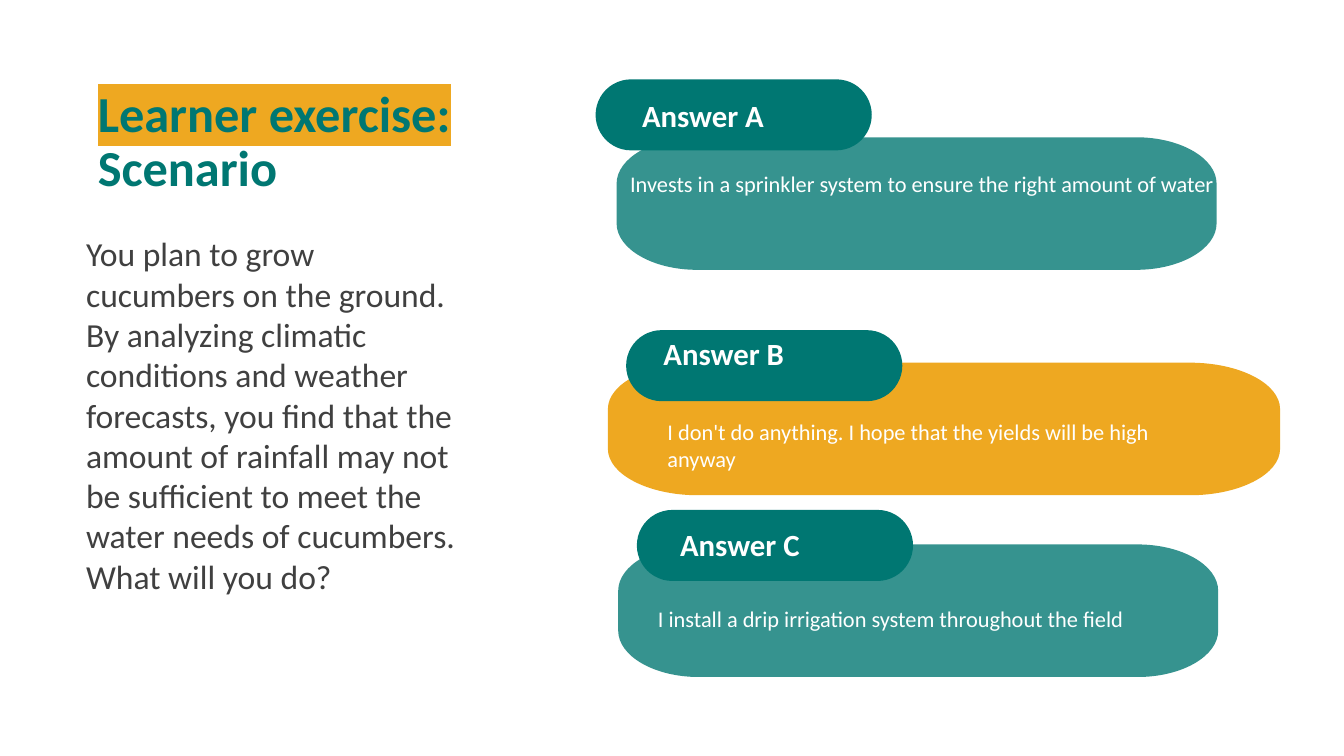
from pptx import Presentation
from pptx.dml.color import RGBColor
from pptx.enum.shapes import MSO_SHAPE
from pptx.enum.text import MSO_ANCHOR, MSO_AUTO_SIZE, PP_ALIGN
from pptx.oxml.ns import qn
from pptx.util import Cm, Pt
from lxml.etree import SubElement

COLORS = {"teal": "007772", "amber": "EEA821", "white": "FFFFFF", "gray": "404040"}
PILL_WIDTH, PILL_HEIGHT = 6.96, 1.79
PANEL_HEIGHT = 3.34
CORNER_X, CORNER_Y = 0.134, 0.35  # corner radii as shares of panel width and height
CURVE = 0.55  # how far a Bezier handle reaches towards its corner


def add_run(paragraph, text, size, color, bold=False):
    run = paragraph.add_run()
    run.text = text
    settings = {"size": Pt(size), "bold": bold, "name": "Calibri"}
    for name, value in settings.items():
        setattr(run.font, name, value)
    run.font.color.rgb = RGBColor.from_string(COLORS[color])
    return run


def add_text(box, text, size, color, bold=False):
    """Add a wrapping text box at box = (left, top, width, height) in cm."""
    frame = slide.shapes.add_textbox(*map(Cm, box)).text_frame
    frame.word_wrap = True
    add_run(frame.paragraphs[0], text, size, color, bold)


presentation = Presentation()
presentation.slide_width = Cm(33.87)
presentation.slide_height = Cm(19.05)
slide = presentation.slides.add_slide(presentation.slide_layouts[5])

# Title
title = slide.shapes.title
title.left, title.top, title.width, title.height = map(Cm, (2.21, 2.11, 11.68, 2.24))
frame = title.text_frame
frame.word_wrap = True
frame.auto_size = MSO_AUTO_SIZE.NONE
frame.vertical_anchor = MSO_ANCHOR.TOP
paragraph = frame.paragraphs[0]
paragraph.alignment = PP_ALIGN.LEFT
paragraph.line_spacing = 0.9
paragraph.space_before = Pt(0)
heading = add_run(paragraph, "Learner exercise: ", 36, "teal", True)
add_run(paragraph, "Scenario", 36, "teal", True)
properties = heading.font._element
highlight = SubElement(properties, qn("a:highlight"))
SubElement(highlight, qn("a:srgbClr"), val=COLORS["amber"])
properties.find(qn("a:solidFill")).addnext(highlight)

# Scenario
add_text(
    (1.92, 5.75, 9.88, 9.5),
    "You plan to grow cucumbers on the ground. By analyzing climatic conditions and "
    "weather forecasts, you find that the amount of rainfall may not be sufficient to "
    "meet the water needs of cucumbers. What will you do?",
    24, "gray",
)

# Answers: panel (left, top, width), fill, opacity, pill (left, top), label box, text box
answers = [
    ("Answer A", "Invests in a sprinkler system to ensure the right amount of water",
     (15.54, 3.46, 15.12), "teal", 79, (15.01, 2.0),
     (15.93, 2.31, 6.96, 1.19), (15.63, 4.17, 15.39, 0.94)),
    ("Answer B", "I don't do anything. I hope that the yields will be high anyway",
     (15.32, 9.14, 16.94), "amber", 100, (15.78, 8.32),
     (16.47, 8.31, 11.02, 1.19), (16.57, 10.41, 14.07, 1.63)),
    ("Answer C", "I install a drip irrigation system throughout the field",
     (15.58, 13.72, 15.12), "teal", 79, (16.05, 12.85),
     (16.89, 13.12, 11.02, 1.19), (16.33, 15.12, 14.0, 0.94)),
]

for label, text, (left, top, width), color, opacity, pill_at, label_box, text_box in answers:
    right, bottom = left + width, top + PANEL_HEIGHT
    radius_x, radius_y = width * CORNER_X, PANEL_HEIGHT * CORNER_Y
    inner_left, inner_right = left + radius_x, right - radius_x
    inner_top, inner_bottom = top + radius_y, bottom - radius_y
    outline = [(Cm(x), Cm(y)) for x, y in (
        (inner_right, bottom), (inner_left, bottom), (left, inner_bottom),
        (left, inner_top), (inner_left, top), (inner_right, top),
        (right, inner_top), (right, inner_bottom), (inner_right, bottom))]
    builder = slide.shapes.build_freeform(*outline[0])
    builder.add_line_segments(outline[1:], close=True)
    panel = builder.convert_to_shape()

    # Every second segment of the outline is a rounded corner
    segments = list(panel._element.iter(qn("a:lnTo")))
    for index in range(1, len(segments), 2):
        start, end = ([int(segment[0].get(axis)) for axis in "xy"]
                      for segment in segments[index - 1:index + 1])
        corner = (end[0], start[1]) if index % 4 == 1 else (start[0], end[1])
        handles = [[round(a + (c - a) * CURVE) for a, c in zip(point, corner)]
                   for point in (start, end)]
        segments[index].tag = qn("a:cubicBezTo")
        for position, (x, y) in enumerate(handles):
            handle = SubElement(segments[index], qn("a:pt"), x=str(x), y=str(y))
            segments[index].insert(position, handle)

    pill = slide.shapes.add_shape(MSO_SHAPE.ROUNDED_RECTANGLE, *map(Cm, pill_at),
                                  Cm(PILL_WIDTH), Cm(PILL_HEIGHT))
    pill.adjustments[0] = 0.5
    for shape, fill in ((panel, color), (pill, "teal")):
        shape.shadow.inherit = False
        shape.fill.solid()
        shape.fill.fore_color.rgb = RGBColor.from_string(COLORS[fill])
        shape.line.fill.background()
    if opacity < 100:
        fill_color = panel._element.spPr.find(qn("a:solidFill")).find(qn("a:srgbClr"))
        SubElement(fill_color, qn("a:alpha"), val=str(opacity * 1000))
    add_text(label_box, label, 22, "white", True)
    add_text(text_box, text, 16, "white")

presentation.save("out.pptx")
